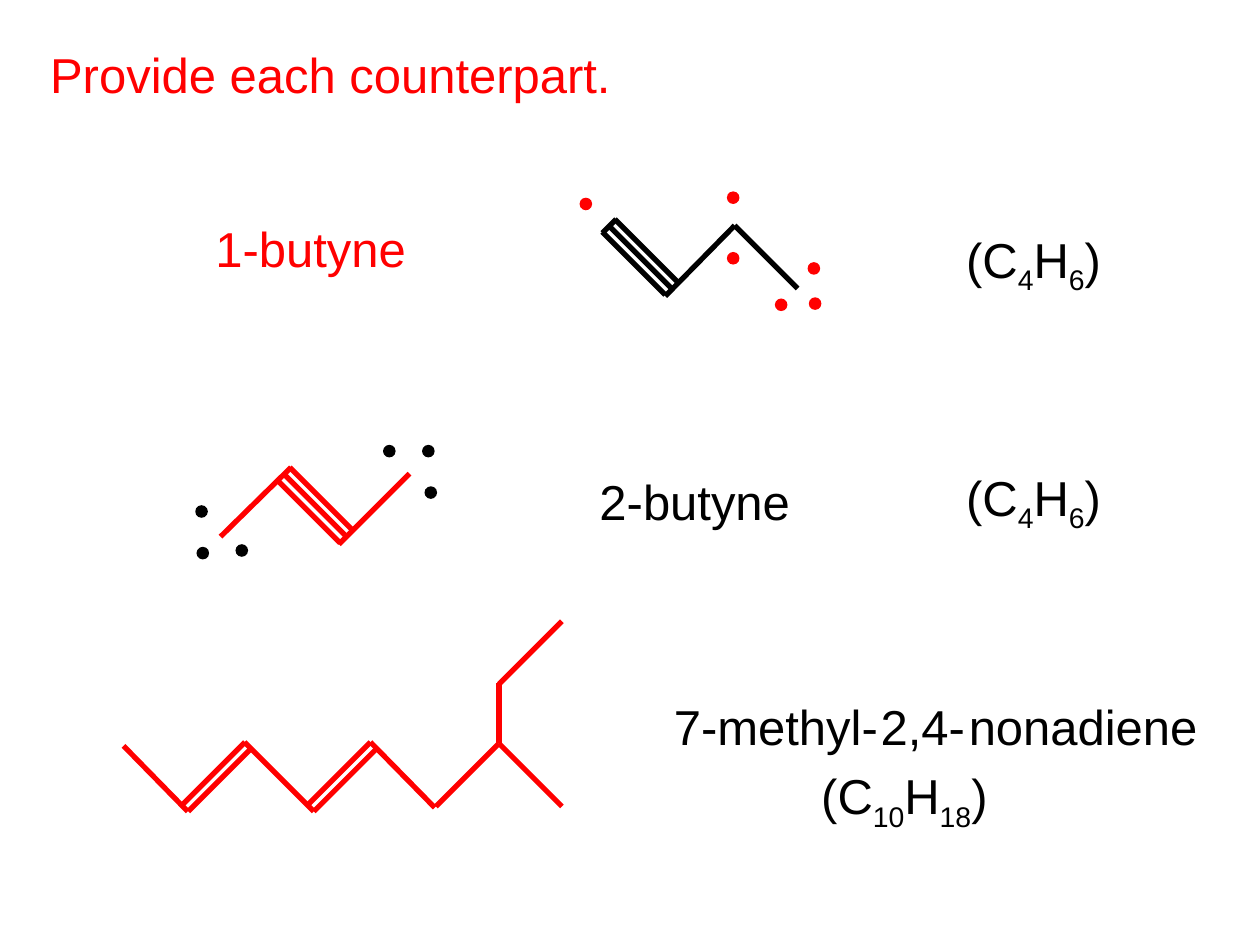
from dataclasses import dataclass
from itertools import groupby
from math import hypot

from lxml import etree
from pptx import Presentation
from pptx.dml.color import RGBColor
from pptx.enum.shapes import MSO_CONNECTOR, MSO_SHAPE
from pptx.enum.text import MSO_ANCHOR, MSO_AUTO_SIZE
from pptx.oxml.ns import qn
from pptx.util import Pt

STRAIGHT = MSO_CONNECTOR.STRAIGHT
OVAL = MSO_SHAPE.OVAL
MIDDLE = MSO_ANCHOR.MIDDLE
FIT_SHAPE = MSO_AUTO_SIZE.SHAPE_TO_FIT_TEXT


@dataclass(frozen=True)
class Theme:
    red: RGBColor = RGBColor(0xFF, 0, 0)
    black: RGBColor = RGBColor(0, 0, 0)
    font: str = "Arial"
    size: float = 28
    bond_width: float = 3
    bond_gap: float = 5.1
    dot_size: float = 7.2
    label_height: float = 41


THEME = Theme()


@dataclass(frozen=True)
class Label:
    text: str
    x: float
    y: float
    width: float
    color: RGBColor = THEME.black
    formula: bool = False


@dataclass(frozen=True)
class Bond:
    x1: float
    y1: float
    x2: float
    y2: float
    order: int = 1


@dataclass(frozen=True)
class Molecule:
    bonds: list[Bond]
    bond_color: RGBColor
    dots: list[tuple[float, float]]
    dot_color: RGBColor


LABELS = [
    Label("Provide each counterpart.", 21.6, 21.6, 343.4, THEME.red),
    Label("1-butyne", 116, 121, 131.8, THEME.red),
    Label("2-butyne", 335.5, 265.7, 131.8),
    Label("(C4H6)", 545, 129.6, 95, formula=True),
    Label("(C4H6)", 545, 265.7, 95, formula=True),
    Label("7-methyl-", 378, 394.6, 132.5),
    Label("2,4-", 496.1, 394.6, 63.4),
    Label("nonadiene", 546.5, 394.6, 154.8),
    Label("(C10H18)", 462.2, 436.3, 115.9, formula=True),
]

BUTYNE_1 = Molecule(
    [
        Bond(344.2, 133.2, 352.1, 125.3),
        Bond(347.8, 128.9, 383.8, 164.9, order=3),
        Bond(380.2, 169.2, 419.8, 128.9),
        Bond(419.8, 128.9, 455.8, 164.9),
    ],
    THEME.black,
    [(331.2, 113), (415.4, 109.4), (415.4, 144),
     (442.8, 170.6), (461.5, 149.8), (462.2, 169.9)],
    THEME.red,
)

BUTYNE_2 = Molecule(
    [
        Bond(126, 306.7, 166.3, 267.1),
        Bond(162, 270.7, 198, 306.7, order=3),
        Bond(193.7, 311, 234, 270.7),
    ],
    THEME.red,
    [(112.3, 312.5), (111.6, 288.7), (134.6, 311),
     (218.9, 254.2), (241.2, 254.2), (242.6, 277.9)],
    THEME.black,
)

NONADIENE = Molecule(
    [
        Bond(70.6, 426.2, 107.3, 463.7),
        Bond(105.8, 461.9, 141.8, 425.9, order=2),
        Bond(139.7, 424.1, 179.3, 463.7),
        Bond(177.5, 461.9, 213.5, 425.9, order=2),
        Bond(211.7, 424.1, 248.4, 461.5),
        Bond(249.1, 460.8, 285.1, 424.8),
        Bond(285.1, 424.8, 321.1, 460.8),
        Bond(285.1, 424.8, 285.1, 390.2),
        Bond(285.1, 391, 321.1, 355),
    ],
    THEME.red,
    [],
    THEME.black,
)


def draw_label(shapes, label: Label) -> None:
    """Write a label; digits in a formula become subscripts."""
    sp = shapes.add_textbox(Pt(label.x), Pt(label.y),
                            Pt(label.width), Pt(THEME.label_height))
    tf = sp.text_frame
    tf.word_wrap = False
    tf.auto_size = FIT_SHAPE
    tf.vertical_anchor = MIDDLE
    p = tf.paragraphs[0]
    if label.formula:
        for is_digit, chars in groupby(label.text, str.isdigit):
            r = p.add_run()
            r.text = "".join(chars)
            if is_digit:
                r.font._element.set("baseline", "-25000")
    else:
        p.text = label.text
    for r in p.runs:
        r.font.name = THEME.font
        r.font.size = Pt(THEME.size)
        r.font.color.rgb = label.color


def draw_bond(shapes, bond: Bond, color: RGBColor) -> None:
    """Draw one to three parallel lines centred on the bond's axis."""
    dx, dy = bond.x2 - bond.x1, bond.y2 - bond.y1
    length = hypot(dx, dy)
    for i in range(bond.order):
        shift = (i - (bond.order - 1) / 2) * THEME.bond_gap
        ox, oy = -dy / length * shift, dx / length * shift
        line = shapes.add_connector(STRAIGHT, Pt(bond.x1 + ox), Pt(bond.y1 + oy),
                                    Pt(bond.x2 + ox), Pt(bond.y2 + oy))
        line.line.color.rgb = color
        line.line.width = Pt(THEME.bond_width)
        etree.SubElement(line._element.spPr, qn("a:effectLst"))


def draw_dot(shapes, x: float, y: float, color: RGBColor) -> None:
    sp = shapes.add_shape(OVAL, Pt(x), Pt(y), Pt(THEME.dot_size), Pt(THEME.dot_size))
    sp.shadow.inherit = False
    sp.fill.solid()
    sp.fill.fore_color.rgb = color
    sp.line.fill.background()


def draw_molecule(shapes, molecule: Molecule) -> None:
    group = shapes.add_group_shape()
    for bond in molecule.bonds:
        draw_bond(group.shapes, bond, molecule.bond_color)
    for x, y in molecule.dots:
        draw_dot(group.shapes, x, y, molecule.dot_color)


def main() -> None:
    prs = Presentation()
    prs.slide_width, prs.slide_height = Pt(720), Pt(540)
    s = prs.slides.add_slide(prs.slide_layouts[6])
    for molecule in (BUTYNE_1, BUTYNE_2, NONADIENE):
        draw_molecule(s.shapes, molecule)
    for label in LABELS:
        draw_label(s.shapes, label)
    prs.save("out.pptx")


if __name__ == "__main__":
    main()
